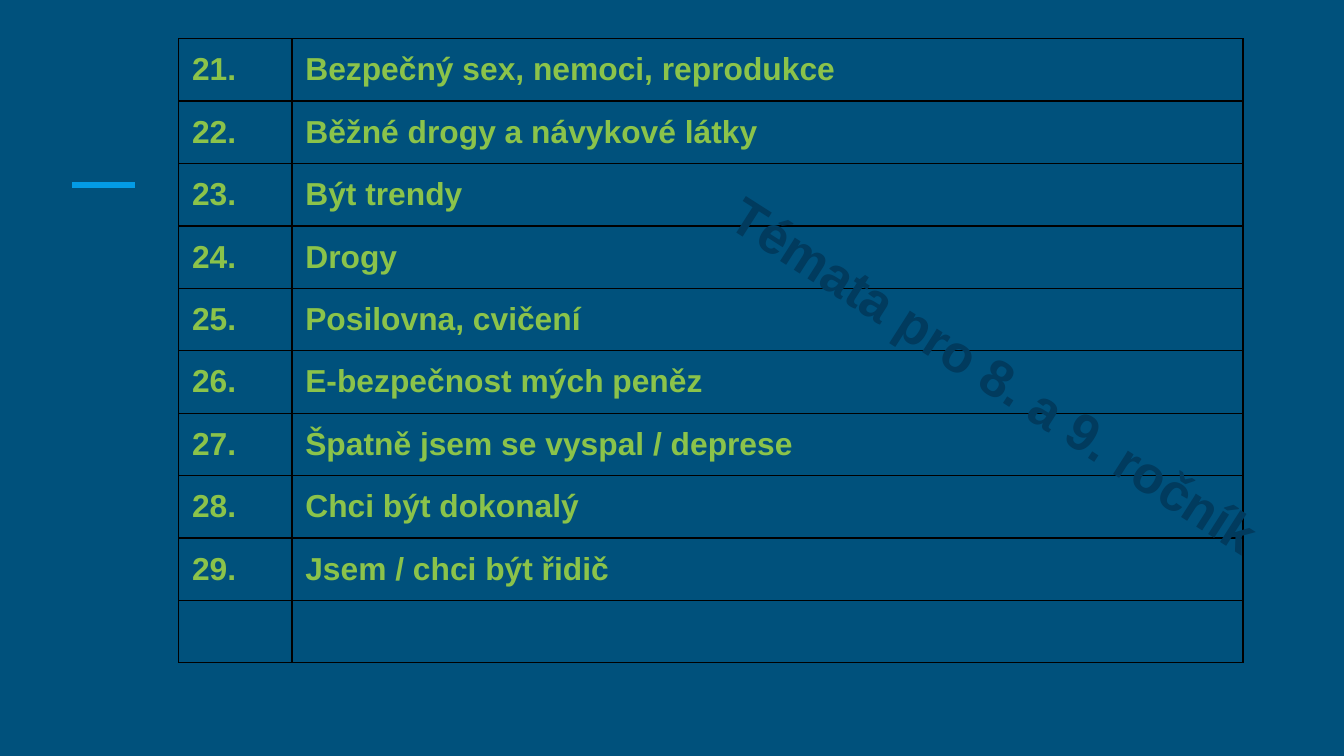
"""Build a slide listing lesson topics 21 to 29 for grades 8 and 9."""
import pptx
import pptx.dml.color
import pptx.enum.shapes
import pptx.enum.text
import pptx.oxml
import pptx.oxml.ns
import pptx.util
from lxml import etree

Cm = pptx.util.Cm
Pt = pptx.util.Pt

COLORS = {
    "background": "00517C",
    "accent": "039BE5",
    "topic": "8BC34A",
    "title": "013B5E",
    "border": "000000",
}
FIRST_NUMBER = 21
TOPICS = [
    "Bezpečný sex, nemoci, reprodukce",
    "Běžné drogy a návykové látky",
    "Být trendy",
    "Drogy",
    "Posilovna, cvičení",
    "E-bezpečnost mých peněz",
    "Špatně jsem se vyspal / deprese",
    "Chci být dokonalý",
    "Jsem / chci být řidič",
]
COLUMN_WIDTHS = [2.14, 17.97]
ROW_HEIGHT = 1.18


def rgb(name):
    return pptx.dml.color.RGBColor.from_string(COLORS[name])


def add_run(p, text, size, color):
    r = p.add_run()
    r.text = text
    r.font.name = "Arial"
    r.font.size = Pt(size)
    r.font.bold = True
    r.font.color.rgb = rgb(color)


def add_accent_line(s):
    line = s.shapes.add_connector(
        pptx.enum.shapes.MSO_CONNECTOR.STRAIGHT, Cm(1.37), Cm(3.5), Cm(2.55), Cm(3.5)
    )
    line.line.color.rgb = rgb("accent")
    line.line.width = Pt(3)
    etree.SubElement(line._element.spPr, pptx.oxml.ns.qn("a:effectLst"))


def set_borders(cell):
    tc_pr = cell._tc.get_or_add_tcPr()
    for i, side in enumerate(("lnL", "lnR", "lnT", "lnB")):
        border = pptx.oxml.parse_xml(
            f'<a:{side} {pptx.oxml.ns.nsdecls("a")} w="{Pt(0.75)}"><a:solidFill>'
            f'<a:srgbClr val="{COLORS["border"]}"/></a:solidFill></a:{side}>'
        )
        tc_pr.insert(i, border)


def fill_cell(cell, text):
    cell.fill.background()
    set_borders(cell)
    if text:
        cell.margin_left = cell.margin_right = cell.margin_top = Cm(0.25)
        cell.margin_bottom = Cm(0.24)
        add_run(cell.text_frame.paragraphs[0], text, 17, "topic")


def add_topic_table(s):
    rows = [(f"{n}.", topic) for n, topic in enumerate(TOPICS, FIRST_NUMBER)]
    rows.append(("", ""))
    table = s.shapes.add_table(
        len(rows), len(COLUMN_WIDTHS), Cm(3.38), Cm(0.73),
        Cm(sum(COLUMN_WIDTHS)), Cm(ROW_HEIGHT * len(rows)),
    ).table
    table.first_row = False
    table.horz_banding = False
    for column, width in zip(table.columns, COLUMN_WIDTHS):
        column.width = Cm(width)
    for i, row in enumerate(rows):
        table.rows[i].height = Cm(ROW_HEIGHT)
        for j, text in enumerate(row):
            fill_cell(table.cell(i, j), text)


def add_slanted_title(s, text):
    sp = s.shapes.add_textbox(Cm(11.46), Cm(6.35), Cm(14.7), Cm(1.45))
    sp.rotation = 32.6
    tf = sp.text_frame
    tf.word_wrap = True
    tf.auto_size = pptx.enum.text.MSO_AUTO_SIZE.SHAPE_TO_FIT_TEXT
    p = tf.paragraphs[0]
    p.alignment = pptx.enum.text.PP_ALIGN.CENTER
    add_run(p, text, 28, "title")


def main():
    prs = pptx.Presentation()
    prs.slide_width = Cm(25.4)
    prs.slide_height = Cm(14.29)
    s = prs.slides.add_slide(prs.slide_layouts[6])
    s.background.fill.solid()
    s.background.fill.fore_color.rgb = rgb("background")
    add_accent_line(s)
    add_topic_table(s)
    add_slanted_title(s, "Témata pro 8. a 9. ročník")
    prs.save("out.pptx")


if __name__ == "__main__":
    main()
